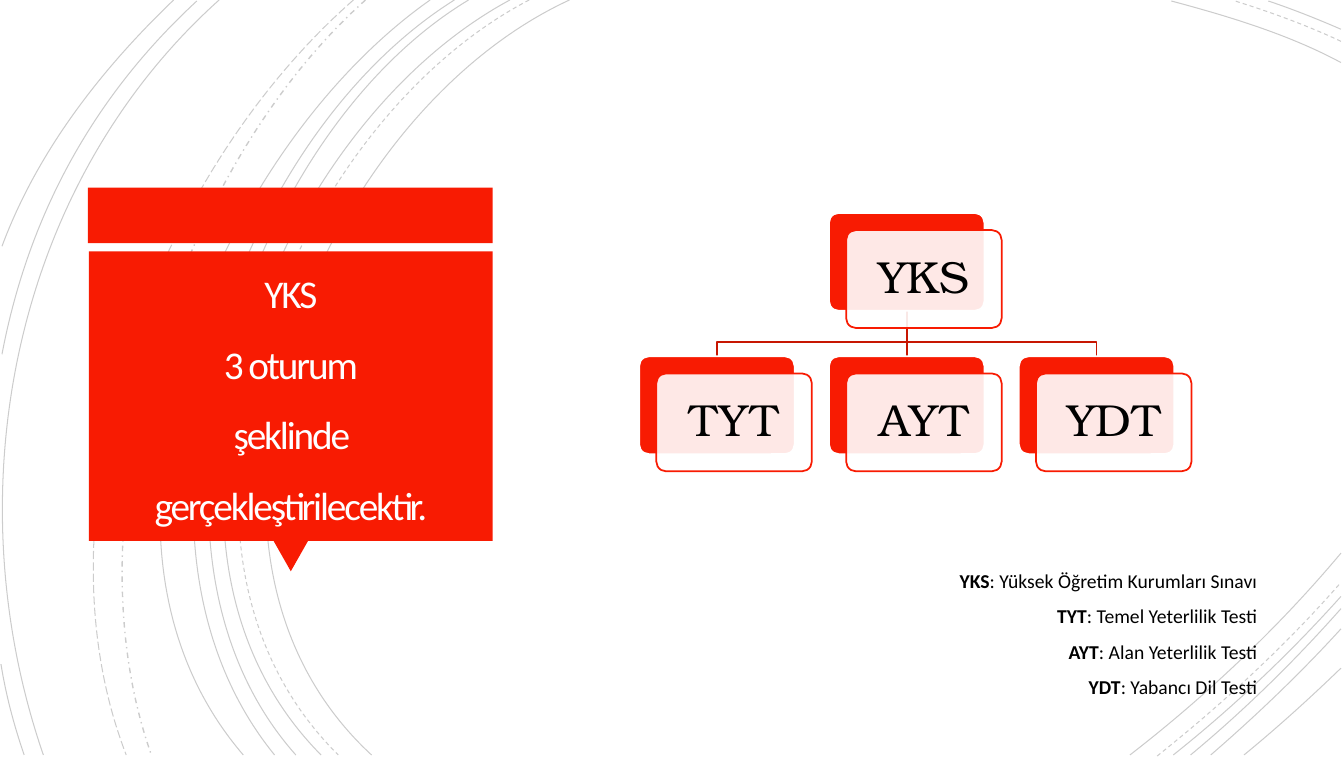
from lxml import etree
from pptx import Presentation
from pptx.dml.color import RGBColor
from pptx.enum import dml, shapes, text
from pptx.oxml.ns import qn
from pptx.util import Inches, Pt

RED = RGBColor(0xF8, 0x1B, 0x02)
DARK = RGBColor(0xC7, 0x16, 0x02)
WHITE = RGBColor(0xFF, 0xFF, 0xFF)
CREAM = RGBColor(0xFF, 0xFE, 0xFF)
BLACK = RGBColor(0, 0, 0)
KIND = shapes.MSO_SHAPE
DASH = dml.MSO_LINE


def fade(shape, percent):
    """Set the opacity of the first colour in the shape's properties."""
    color = next(shape._element.spPr.iter(qn("a:srgbClr")))
    etree.SubElement(color, qn("a:alpha")).set("val", str(percent * 1000))


def trace(points, color, width):
    """Draw an open outline through points given in inches."""
    spots = [(Inches(x), Inches(y)) for x, y in points]
    pen = slide.shapes.build_freeform(*spots[0])
    pen.add_line_segments(spots[1:], close=False)
    shape = pen.convert_to_shape()
    shape.shadow.inherit = False
    shape.fill.background()
    shape.line.color.rgb = color
    shape.line.width = Pt(width)
    return shape


deck = Presentation()
deck.slide_width, deck.slide_height = Inches(13.31), Inches(7.5)
slide = deck.slides.add_slide(deck.slide_layouts[6])

# Background arcs: start, two control points, end
arcs = {
    (DASH.SOLID, 0.75): [
        (5.64, 0, 3.14, 1.15, 1.43, 5.4, 3.68, 7.48),
        (13.28, 0.62, 12.76, 0.34, 12.16, 0.16, 11.6, 0.01),
        (11.19, 7.48, 11.94, 6.9, 12.66, 6.22, 13.28, 5.48),
        (5.05, 0, 2.69, 1.27, 1.09, 5.37, 3.18, 7.48),
        (13.28, 0.29, 13.05, 0.19, 12.8, 0.09, 12.56, 0.01),
        (11.62, 7.48, 12.21, 7.01, 12.77, 6.48, 13.28, 5.91),
        (4.64, 0, 2.43, 1.33, 1.09, 5.41, 2.93, 7.48),
        (11.79, 7.48, 12.32, 7.04, 12.82, 6.55, 13.28, 6.03),
        (4.5, 0, 2.3, 1.38, 0.97, 5.33, 2.72, 7.48),
        (11.99, 7.48, 12.44, 7.09, 12.88, 6.67, 13.28, 6.23),
        (4.26, 0, 2.17, 1.47, 0.53, 5.29, 2.41, 7.48),
        (12.32, 7.48, 12.65, 7.21, 12.97, 6.92, 13.28, 6.62),
        (2.17, 0, 0.11, 1.85, -0.46, 4.9, 0.43, 7.48),
        (1.95, 0.01, 0.92, 0.96, 0.28, 2.14, 0.02, 3.51),
        (0.01, 6.58, 0.06, 6.89, 0.14, 7.19, 0.24, 7.48),
        (1.72, 0, 1, 0.69, 0.37, 1.5, 0.02, 2.44),
    ],
    (DASH.DASH, 0.75): [
        (5.24, 0, 2.84, 1.25, 1.22, 5.37, 3.35, 7.48),
        (13.28, 0.41, 12.94, 0.25, 12.58, 0.12, 12.23, 0.01),
        (11.46, 7.49, 12.1, 6.98, 12.73, 6.4, 13.28, 5.77),
    ],
    (DASH.DASH_DOT, 1): [(3.62, 0, 1.76, 1.66, 0.65, 5.09, 1.5, 7.48)],
    (DASH.LONG_DASH, 0.75): [(3.5, 0, 1.57, 1.69, 0.29, 4.99, 1.25, 7.48)],
}
for (dash, width), curves in arcs.items():
    for curve in curves:
        arc = trace(zip(curve[::2], curve[1::2]), BLACK, width)
        arc.line.dash_style = dash
        fade(arc, 20)
        # Turn the three straight segments into one cubic curve
        route = next(arc._element.iter(qn("a:path")))
        bend = etree.SubElement(route, qn("a:cubicBezTo"))
        for leg in route.findall(qn("a:lnTo")):
            bend.append(leg[0])
            route.remove(leg)

# Red title panel
for kind, turn, *box in [
    (KIND.RECTANGLE, 0, 0.87, 1.86, 4.01, 0.55),
    (KIND.ISOSCELES_TRIANGLE, 180, 2.71, 5.36, 0.34, 0.3),
    (KIND.RECTANGLE, 0, 0.88, 2.49, 4, 2.87),
]:
    panel = slide.shapes.add_shape(kind, *map(Inches, box))
    panel.rotation = turn
    panel.shadow.inherit = False
    panel.fill.solid()
    panel.fill.fore_color.rgb = RED
    panel.line.fill.background()

title = slide.shapes.add_textbox(*map(Inches, (0.97, 2.42, 3.82, 2.83)))
frame = title.text_frame
frame.word_wrap = True
frame.vertical_anchor = text.MSO_ANCHOR.MIDDLE
frame.margin_left = frame.margin_right = Inches(0.25)
frame.margin_top = frame.margin_bottom = 0
para = frame.paragraphs[0]
para.text = "YKS\v3 oturum\vşeklinde gerçekleştirilecektir."
para.alignment = text.PP_ALIGN.CENTER
para.line_spacing = 1.5
para.font.name, para.font.size = "Calibri", Pt(28)
para.font.color.rgb = CREAM
for run in para.runs:
    run._r.get_or_add_rPr().set("spc", "-150")

# Exam tree
WIDE, HIGH, SHIFT = 1.54, 0.97, 0.17
TOP, LOW = 2.11, 3.53
cols = [6.33 + 1.88 * i for i in range(3)]
root = cols[1] + WIDE / 2
for left in reversed(cols):
    mid = left + WIDE / 2
    trace([(root, TOP + HIGH), (root, 3.39), (mid, 3.39), (mid, LOW)], DARK, 1.25)

cards = [("YKS", cols[1], TOP), ("TYT", cols[0], LOW),
         ("AYT", cols[1], LOW), ("YDT", cols[2], LOW)]
for label, left, top in cards:
    for shift, fill, line in [(0, RED, WHITE), (SHIFT, WHITE, RED)]:
        card = slide.shapes.add_shape(
            KIND.ROUNDED_RECTANGLE, Inches(left + shift), Inches(top + shift),
            Inches(WIDE), Inches(HIGH))
        card.adjustments[0] = 0.1
        card.shadow.inherit = False
        card.fill.solid()
        card.fill.fore_color.rgb = fill
        card.line.color.rgb = line
        card.line.width = Pt(1.25)
    fade(card, 90)
    card.text_frame.vertical_anchor = text.MSO_ANCHOR.MIDDLE
    para = card.text_frame.paragraphs[0]
    para.text = label
    para.alignment = text.PP_ALIGN.CENTER
    para.line_spacing = 0.9
    para.font.name, para.font.size = "TeX Gyre Bonum", Pt(32)
    para.font.color.rgb = BLACK

# Key to the short names
terms = {
    "YKS": "Yüksek Öğretim Kurumları Sınavı",
    "TYT": "Temel Yeterlilik Testi",
    "AYT": "Alan Yeterlilik Testi",
    "YDT": "Yabancı Dil Testi",
}
key = slide.shapes.add_textbox(*map(Inches, (5.48, 5.47, 7.07, 1.47)))
frame = key.text_frame
frame.word_wrap = True
for i, (short, full) in enumerate(terms.items()):
    para = frame.add_paragraph() if i else frame.paragraphs[0]
    para.alignment = text.PP_ALIGN.RIGHT
    para.line_spacing = 1.5
    para.font.name, para.font.size = "Calibri", Pt(14)
    para.font.color.rgb = BLACK
    for words, bold in [(short, True), (": " + full, False)]:
        run = para.add_run()
        run.text = words
        run.font.bold = bold

deck.save("out.pptx")
